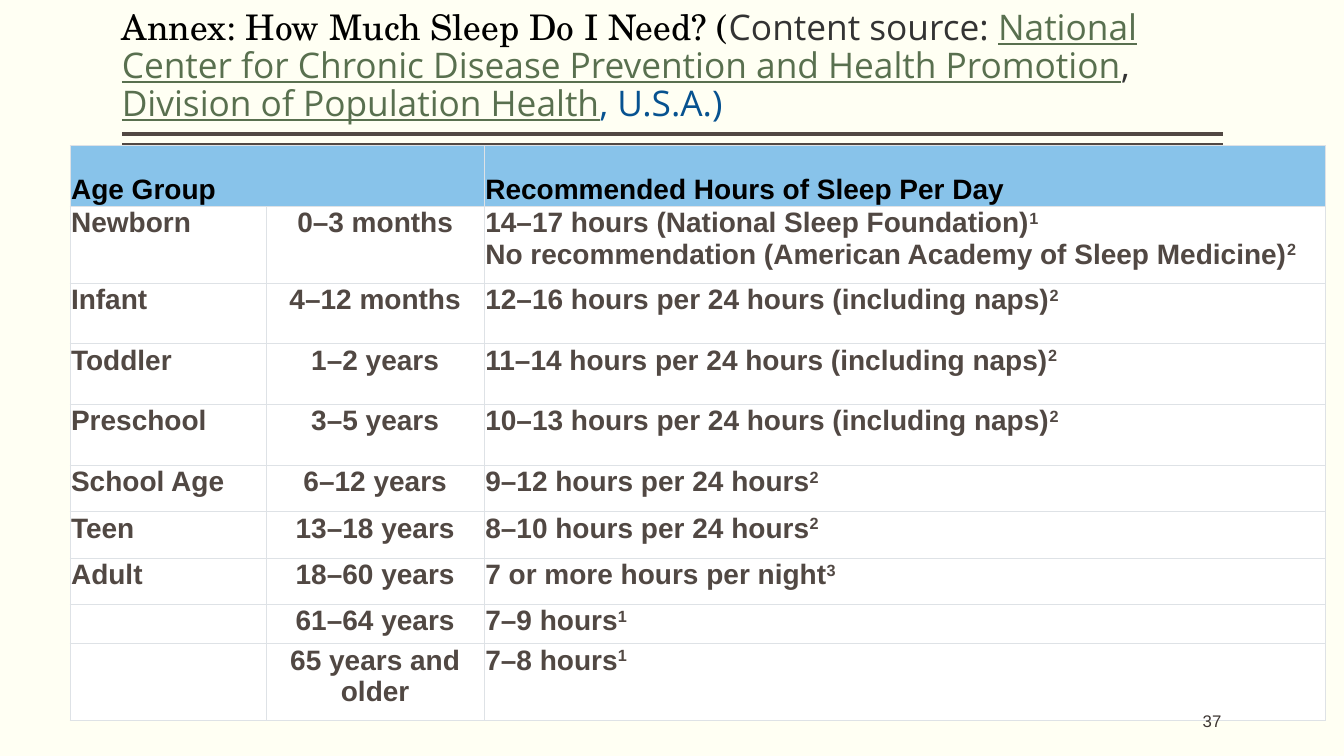
from dataclasses import dataclass

from lxml.etree import SubElement
from pptx import Presentation
from pptx.dml.color import RGBColor
from pptx.enum.shapes import MSO_CONNECTOR
from pptx.enum.text import MSO_ANCHOR, PP_ALIGN
from pptx.oxml.ns import qn
from pptx.util import Cm, Pt


@dataclass(frozen=True)
class Theme:
    """Colours, fonts and type sizes of the slide."""

    background: str = "FFFFF3"
    black: str = "000000"
    brown: str = "514843"
    gray: str = "333333"
    link: str = "59704F"
    navy: str = "075290"
    number: str = "3D3632"
    header: str = "88C3EA"
    white: str = "FFFFFF"
    border: str = "DEE2E6"
    serif: str = "TeX Gyre Schola"
    sans: str = "Open Sans"
    body: str = "Arial"
    title_size: float = 25.2
    table_size: float = 20
    number_size: float = 12


THEME = Theme()

TITLE_RUNS = [
    ("Annex: How Much Sleep Do I Need? (", THEME.serif, THEME.black, False),
    ("Content source: ", THEME.sans, THEME.gray, False),
    ("National Center for Chronic Disease Prevention and Health Promotion",
     THEME.sans, THEME.link, True),
    (", ", THEME.sans, THEME.gray, False),
    ("Division of Population Health", THEME.sans, THEME.link, True),
    (", U.S.A.)", THEME.sans, THEME.navy, False),
]

COLUMN_WIDTHS = [4.95, 5.49, 21.2]
HEADER_HEIGHT = 1.53
SLEEP_ROWS = [
    (1.93, "Newborn", "0–3 months",
     [("14–17 hours (National Sleep Foundation)", "1"),
      ("No recommendation (American Academy of Sleep Medicine)", "2")]),
    (1.53, "Infant", "4–12 months", [("12–16 hours per 24 hours (including naps)", "2")]),
    (1.53, "Toddler", "1–2 years", [("11–14 hours per 24 hours (including naps)", "2")]),
    (1.53, "Preschool", "3–5 years", [("10–13 hours per 24 hours (including naps)", "2")]),
    (1.17, "School Age", "6–12 years", [("9–12 hours per 24 hours", "2")]),
    (1.17, "Teen", "13–18 years", [("8–10 hours per 24 hours", "2")]),
    (1.17, "Adult", "18–60 years", [("7 or more hours per night", "3")]),
    (0.99, "", "61–64 years", [("7–9 hours", "1")]),
    (1.93, "", "65 years and older", [("7–8 hours", "1")]),
]


def style_font(font, name, size, color, bold=False, underline=False):
    """Set the typeface, size, colour and emphasis of a font."""
    font.name = name
    font.size = Pt(size)
    font.color.rgb = RGBColor.from_string(color)
    font.bold = bold
    font.underline = underline


def add_text_box(slide, left, top, width, height, anchor):
    """Add a wrapping text box without side insets and return its paragraph."""
    shape = slide.shapes.add_textbox(Cm(left), Cm(top), Cm(width), Cm(height))
    text_frame = shape.text_frame
    text_frame.word_wrap = True
    text_frame.vertical_anchor = anchor
    text_frame.margin_left = text_frame.margin_right = 0
    return text_frame.paragraphs[0]


def add_title(slide):
    """Add the title with its differently styled parts."""
    paragraph = add_text_box(slide, 3.07, 0.2, 27.74, 3.05, MSO_ANCHOR.BOTTOM)
    paragraph.line_spacing = 0.9
    for text, name, color, underline in TITLE_RUNS:
        run = paragraph.add_run()
        run.text = text
        style_font(run.font, name, THEME.title_size, color, underline=underline)


def add_rule(slide, top, weight):
    """Add a horizontal rule below the title."""
    connector = slide.shapes.add_connector(
        MSO_CONNECTOR.STRAIGHT, Cm(30.81), Cm(top), Cm(3.07), Cm(top))
    connector.line.color.rgb = RGBColor.from_string(THEME.brown)
    connector.line.width = Pt(weight)
    SubElement(connector._element.spPr, qn("a:effectLst"))


def style_cell(cell, fill):
    """Set the margins, thin borders and fill of a cell."""
    cell.margin_left = cell.margin_right = Cm(0.03)
    cell.margin_top = cell.margin_bottom = Cm(0.03)
    properties = cell._tc.get_or_add_tcPr()
    for side in ("a:lnL", "a:lnR", "a:lnT", "a:lnB"):
        line = SubElement(properties, qn(side), w=str(Pt(0.5)))
        solid = SubElement(line, qn("a:solidFill"))
        SubElement(solid, qn("a:srgbClr"), val=THEME.border)
    cell.fill.solid()
    cell.fill.fore_color.rgb = RGBColor.from_string(fill)


def write_cell(cell, text, color, alignment=PP_ALIGN.LEFT):
    """Write one bold text into a cell."""
    paragraph = cell.text_frame.paragraphs[0]
    paragraph.text = text
    paragraph.alignment = alignment
    for run in paragraph.runs:
        style_font(run.font, THEME.body, THEME.table_size, color, bold=True)


def write_hours(cell, lines):
    """Write lines of recommended hours, each ending in a raised reference."""
    paragraph = cell.text_frame.paragraphs[0]
    for index, (hours, reference) in enumerate(lines):
        if index:
            paragraph.add_line_break()
        for text, baseline in ((hours, "0"), (reference, "30000")):
            run = paragraph.add_run()
            run.text = text
            style_font(run.font, THEME.body, THEME.table_size, THEME.brown, bold=True)
            run._r.get_or_add_rPr().set("baseline", baseline)


def add_sleep_table(slide):
    """Add the table of recommended sleep by age group."""
    heights = [HEADER_HEIGHT] + [row[0] for row in SLEEP_ROWS]
    table = slide.shapes.add_table(
        len(heights), len(COLUMN_WIDTHS), Cm(1.76), Cm(3.67),
        Cm(sum(COLUMN_WIDTHS)), Cm(sum(heights))).table
    table.first_row = table.horz_banding = False
    for column, width in zip(table.columns, COLUMN_WIDTHS):
        column.width = Cm(width)
    for index, (row, height) in enumerate(zip(table.rows, heights)):
        row.height = Cm(height)
        for cell in row.cells:
            style_cell(cell, THEME.white if index else THEME.header)

    table.cell(0, 0).merge(table.cell(0, 1))
    for column, heading in ((0, "Age Group"), (2, "Recommended Hours of Sleep Per Day")):
        cell = table.cell(0, column)
        cell.vertical_anchor = MSO_ANCHOR.BOTTOM
        write_cell(cell, heading, THEME.black)
    for index, (_, group, age, hours) in enumerate(SLEEP_ROWS, start=1):
        write_cell(table.cell(index, 0), group, THEME.brown)
        write_cell(table.cell(index, 1), age, THEME.brown, PP_ALIGN.CENTER)
        write_hours(table.cell(index, 2), hours)


def add_slide_number(slide):
    """Add the slide number at the lower right."""
    paragraph = add_text_box(slide, 25.7, 17.65, 5.08, 1.02, MSO_ANCHOR.MIDDLE)
    paragraph.text = "37"
    paragraph.alignment = PP_ALIGN.RIGHT
    style_font(paragraph.runs[0].font, THEME.body, THEME.number_size, THEME.number)


def main():
    """Build the slide and save it."""
    presentation = Presentation()
    presentation.slide_width = Cm(33.87)
    presentation.slide_height = Cm(19.05)
    slide = presentation.slides.add_slide(presentation.slide_layouts[6])
    slide.background.fill.solid()
    slide.background.fill.fore_color.rgb = RGBColor.from_string(THEME.background)
    add_rule(slide, 3.38, 3)
    add_rule(slide, 3.63, 1)
    add_title(slide)
    add_sleep_table(slide)
    add_slide_number(slide)
    presentation.save("out.pptx")


if __name__ == "__main__":
    main()
